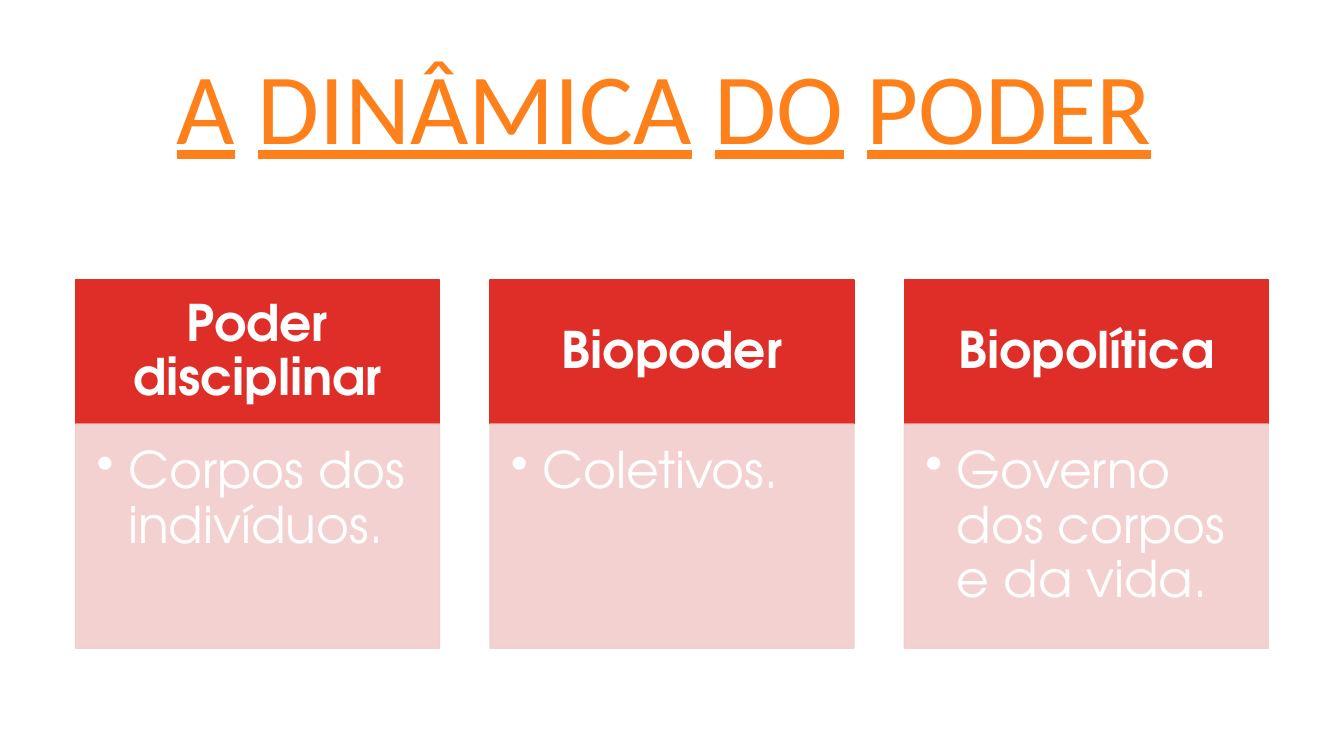
from dataclasses import dataclass

from lxml import etree
from pptx import Presentation
from pptx import util as u
from pptx.dml.color import RGBColor
from pptx.enum import shapes, text
from pptx.oxml.ns import qn


@dataclass(frozen=True)
class Theme:
    title_color: RGBColor = RGBColor(0xFE, 0x80, 0x1A)
    heading_fill: RGBColor = RGBColor(0xDF, 0x2E, 0x28)
    detail_fill: RGBColor = RGBColor(0xF3, 0xCD, 0xCD)
    light: RGBColor = RGBColor(0xFF, 0xFF, 0xFF)
    title_font: str = "Calibri"
    column_font: str = "TeX Gyre Adventor"
    title_size: int = 72
    column_size: int = 36
    line_spacing: float = 0.9


@dataclass(frozen=True)
class Column:
    heading: str
    detail: str


@dataclass(frozen=True)
class Band:
    top: float
    height: float
    fill: RGBColor
    opacity: int
    insets: tuple[float, float, float, float]
    anchor: text.MSO_ANCHOR
    align: text.PP_ALIGN
    bold: bool
    bulleted: bool


THEME = Theme()
COLUMNS = (
    Column("Poder disciplinar", "Corpos dos indivíduos."),
    Column("Biopoder", "Coletivos."),
    Column("Biopolítica", "Governo dos corpos e da vida."),
)
COLUMN_LEFT, COLUMN_WIDTH, COLUMN_GAP = 54, 260, 36
HEADING = Band(200, 103, THEME.heading_fill, 100, (20, 11.5, 20, 11.5),
               text.MSO_ANCHOR.MIDDLE, text.PP_ALIGN.CENTER, True, False)
DETAIL = Band(303, 160, THEME.detail_fill, 90, (15, 15, 20, 23),
              text.MSO_ANCHOR.TOP, text.PP_ALIGN.LEFT, False, True)
BULLET_INDENT = u.Pt(22.5)


def set_opacity(fill, percent: int) -> None:
    color = fill._xPr.find(qn("a:solidFill"))[0]
    etree.SubElement(color, qn("a:alpha"), val=str(percent * 1000))


def add_bullet(paragraph) -> None:
    paragraph.level = 1
    properties = paragraph._p.get_or_add_pPr()
    properties.set("marL", str(BULLET_INDENT))
    properties.set("indent", str(-BULLET_INDENT))
    etree.SubElement(properties, qn("a:buChar"), char="•")


def draw_title(slide, wording: str) -> None:
    title = slide.shapes.title
    title.left, title.top = u.Pt(93.6), u.Pt(14.4)
    title.width, title.height = u.Pt(777.6), u.Pt(131)
    frame = title.text_frame
    frame.auto_size = text.MSO_AUTO_SIZE.NONE
    frame.word_wrap = True
    frame.vertical_anchor = text.MSO_ANCHOR.MIDDLE
    heading = frame.paragraphs[0]
    heading.alignment = text.PP_ALIGN.CENTER
    heading.line_spacing = THEME.line_spacing
    heading.font.name = THEME.title_font
    heading.font.size = u.Pt(THEME.title_size)
    heading.font.color.rgb = THEME.title_color
    for word in wording.split():
        for part, underlined in ((word, True), (" ", False)):
            run = heading.add_run()
            run.text = part
            run.font.underline = underlined


def draw_band(slide, band: Band, left: float, wording: str) -> None:
    panel = slide.shapes.add_shape(
        shapes.MSO_SHAPE.RECTANGLE, u.Pt(left), u.Pt(band.top),
        u.Pt(COLUMN_WIDTH), u.Pt(band.height))
    panel.shadow.inherit = False
    panel.line.width = u.Pt(1)
    for fill in (panel.fill, panel.line.fill):
        fill.solid()
        fill.fore_color.rgb = band.fill
        if band.opacity < 100:
            set_opacity(fill, band.opacity)
    frame = panel.text_frame
    frame.word_wrap = True
    frame.vertical_anchor = band.anchor
    (frame.margin_left, frame.margin_top,
     frame.margin_right, frame.margin_bottom) = map(u.Pt, band.insets)
    paragraph = frame.paragraphs[0]
    paragraph.text = wording
    paragraph.alignment = band.align
    paragraph.line_spacing = THEME.line_spacing
    if band.bulleted:
        add_bullet(paragraph)
    paragraph.font.name = THEME.column_font
    paragraph.font.size = u.Pt(THEME.column_size)
    paragraph.font.bold = band.bold
    paragraph.font.color.rgb = THEME.light


def main() -> None:
    deck = Presentation()
    deck.slide_width, deck.slide_height = u.Pt(960), u.Pt(540)
    slide = deck.slides.add_slide(deck.slide_layouts.get_by_name("Title Only"))
    draw_title(slide, "A DINÂMICA DO PODER")
    for index, column in enumerate(COLUMNS):
        left = COLUMN_LEFT + index * (COLUMN_WIDTH + COLUMN_GAP)
        draw_band(slide, HEADING, left, column.heading)
        draw_band(slide, DETAIL, left, column.detail)
    deck.save("out.pptx")


if __name__ == "__main__":
    main()
